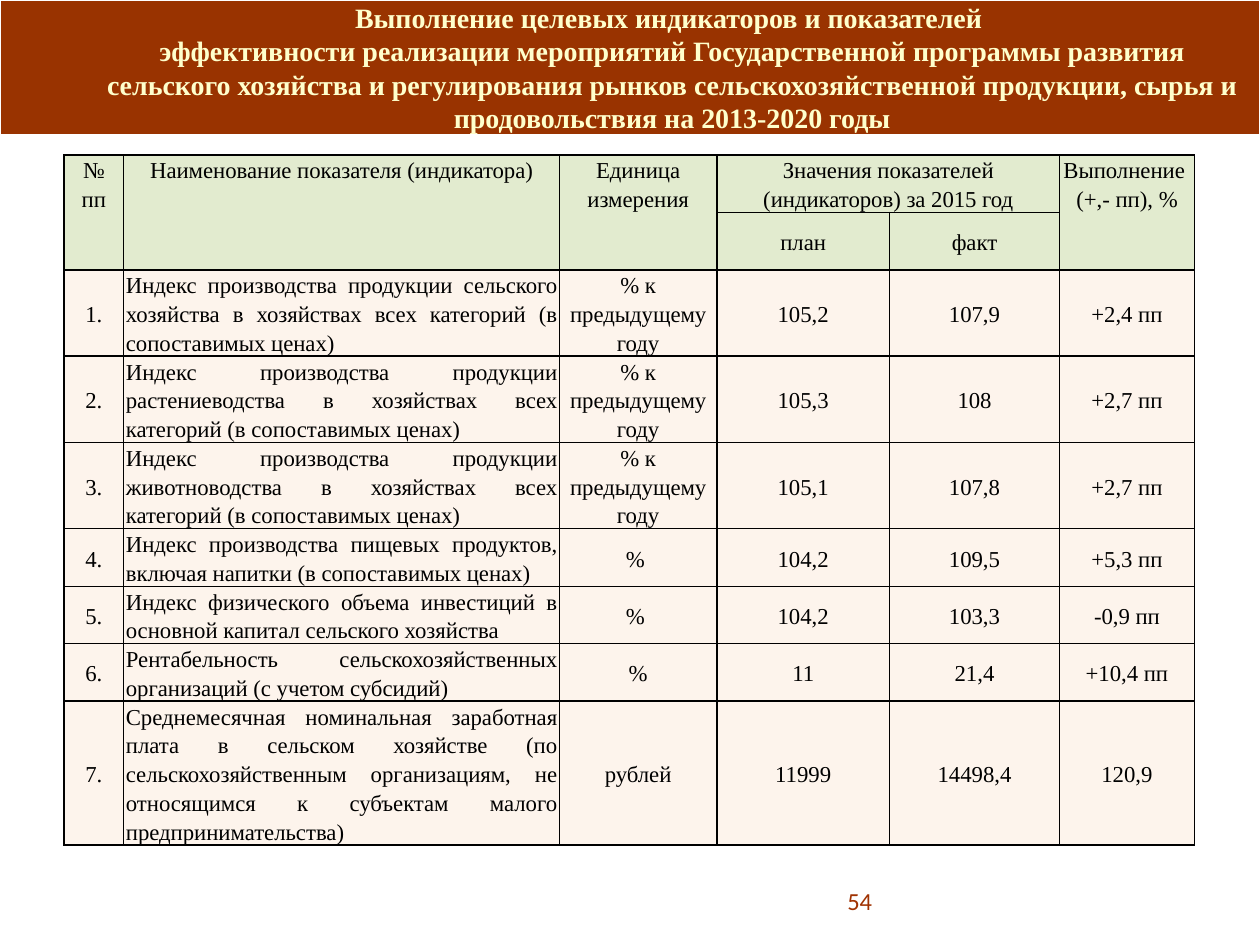
from dataclasses import dataclass

from lxml import etree
from pptx import Presentation
from pptx import util as u
from pptx.dml.color import RGBColor
from pptx.enum import shapes, text
from pptx.oxml.ns import qn


@dataclass(frozen=True)
class Theme:
    serif: str = "Times New Roman"
    sans: str = "Calibri"
    band: str = "993300"
    band_line: str = "FFFFFF"
    title: str = "FFFFCC"
    ink: str = "000000"
    number: str = "A03202"
    header_fill: tuple = ("C3D69B", 48)
    body_fill: tuple = ("FDEADA", 50)
    title_size: int = 16
    table_size: int = 13
    number_size: int = 14


ALIGN = text.PP_ALIGN
ANCHOR = text.MSO_ANCHOR

TITLE = [
    "Выполнение целевых индикаторов и показателей ",
    "эффективности реализации мероприятий Государственной программы развития "
    "сельского хозяйства и регулирования рынков сельскохозяйственной продукции, "
    "сырья и продовольствия на 2013-2020 годы",
]

# (row, column, rows spanned, columns spanned, paragraphs made of lines)
HEADERS = [
    (0, 0, 2, 1, [["№", "пп"]]),
    (0, 1, 2, 1, [["Наименование показателя (индикатора)"]]),
    (0, 2, 2, 1, [["Единица измерения"]]),
    (0, 3, 1, 2, [["Значения показателей (индикаторов) за 2015 год"]]),
    (0, 5, 2, 1, [["Выполнение "], ["(+,- пп), %"]]),
    (1, 3, 1, 1, [["план"]]),
    (1, 4, 1, 1, [["факт"]]),
]

TO_PREVIOUS_YEAR = "% к предыдущему году"
INDICATORS = [
    ("Индекс производства продукции сельского хозяйства в хозяйствах всех "
     "категорий (в сопоставимых ценах)",
     TO_PREVIOUS_YEAR, "105,2", "107,9", "+2,4 пп"),
    ("Индекс производства продукции растениеводства в хозяйствах всех "
     "категорий (в сопоставимых ценах)",
     TO_PREVIOUS_YEAR, "105,3", "108", "+2,7 пп"),
    ("Индекс производства продукции животноводства в хозяйствах всех "
     "категорий (в сопоставимых ценах)",
     TO_PREVIOUS_YEAR, "105,1", "107,8", "+2,7 пп"),
    ("Индекс производства пищевых продуктов, включая напитки "
     "(в сопоставимых ценах)", "% ", "104,2", "109,5", "+5,3 пп"),
    ("Индекс физического объема инвестиций в основной капитал сельского "
     "хозяйства", "% ", "104,2", "103,3", "-0,9 пп"),
    ("Рентабельность сельскохозяйственных организаций (с учетом субсидий)",
     "%", "11", "21,4", "+10,4 пп"),
    ("Среднемесячная номинальная заработная плата в сельском хозяйстве (по "
     "сельскохозяйственным организациям, не относящимся к субъектам малого "
     "предпринимательства)", "рублей", "11999", "14498,4", "120,9"),
]

COLUMN_WIDTHS = [0.47, 3.46, 1.25, 1.37, 1.35, 1.07]
ROW_LINES = [2, 2, 3, 3, 3, 2, 2, 2, 5]
TABLE_HEIGHT = 5.48


class SlideBuilder:
    def __init__(self, slide, theme):
        self.slide = slide
        self.theme = theme

    def add_lines(self, paragraph, lines, font, size, color, align, bold=False):
        paragraph.alignment = align
        for index, line in enumerate(lines):
            if index:
                paragraph.add_line_break()
            run = paragraph.add_run()
            run.text = line
            run.font.name = font
            run.font.size = u.Pt(size)
            run.font.bold = bold
            run.font.color.rgb = RGBColor.from_string(color)

    def band(self, left, top, width, height):
        band = self.slide.shapes.add_shape(
            shapes.MSO_SHAPE.RECTANGLE,
            *map(u.Inches, (left, top, width, height)))
        band.shadow.inherit = False
        band.fill.solid()
        band.fill.fore_color.rgb = RGBColor.from_string(self.theme.band)
        band.line.color.rgb = RGBColor.from_string(self.theme.band_line)
        band.line.width = u.Pt(0.75)
        # Index 2 is the back of the drawing order, behind the title
        self.slide.shapes._spTree.insert(2, band._element)

    def title(self, lines, left, top, width, height):
        title = self.slide.shapes.title
        title.left, title.top, title.width, title.height = map(
            u.Inches, (left, top, width, height))
        frame = title.text_frame
        frame.auto_size = text.MSO_AUTO_SIZE.NONE
        frame.vertical_anchor = ANCHOR.MIDDLE
        self.add_lines(frame.paragraphs[0], lines, self.theme.serif,
                       self.theme.title_size, self.theme.title,
                       ALIGN.CENTER, True)

    def page_number(self, number, left, top, width, height):
        box = self.slide.shapes.add_textbox(
            *map(u.Inches, (left, top, width, height)))
        frame = box.text_frame
        frame.word_wrap = True
        frame.vertical_anchor = ANCHOR.MIDDLE
        self.add_lines(frame.paragraphs[0], [number], self.theme.sans,
                       self.theme.number_size, self.theme.number, ALIGN.RIGHT)

    def table(self, left, top, widths, row_lines, height):
        """Add a plain table whose row heights follow their line counts."""
        frame = self.slide.shapes.add_table(
            len(row_lines), len(widths),
            *map(u.Inches, (left, top, sum(widths), height)))
        table = frame.table
        table.first_row = table.horz_banding = False
        for column, width in zip(table.columns, widths):
            column.width = u.Inches(width)
        for row, lines in zip(table.rows, row_lines):
            row.height = u.Inches(height * lines / sum(row_lines))
        return table

    def cell_style(self, cell, fill):
        """Set borders and a translucent fill given as (colour, opacity %)."""
        color, opacity = fill
        cell.margin_left = cell.margin_right = u.Inches(0.02)
        cell.margin_top = cell.margin_bottom = 0
        cell.fill.solid()
        cell.fill.fore_color.rgb = RGBColor.from_string(color)
        properties = cell._tc.get_or_add_tcPr()
        swatch = properties.find(".//" + qn("a:srgbClr"))
        etree.SubElement(swatch, qn("a:alpha"), val=str(opacity * 1000))
        for index, side in enumerate(("lnL", "lnR", "lnT", "lnB")):
            border = etree.Element(qn("a:" + side), w=str(u.Pt(1)))
            solid = etree.SubElement(border, qn("a:solidFill"))
            etree.SubElement(solid, qn("a:srgbClr"), val=self.theme.ink)
            properties.insert(index, border)

    def cell_text(self, cell, paragraphs, align=ALIGN.CENTER,
                  anchor=ANCHOR.MIDDLE):
        cell.vertical_anchor = anchor
        frame = cell.text_frame
        for index, lines in enumerate(paragraphs):
            paragraph = frame.add_paragraph() if index else frame.paragraphs[0]
            paragraph.line_spacing = 1.15
            self.add_lines(paragraph, lines, self.theme.serif,
                           self.theme.table_size, self.theme.ink, align)


def main():
    presentation = Presentation()
    presentation.slide_width = u.Inches(10)
    presentation.slide_height = u.Inches(7.5)
    theme = Theme()
    builder = SlideBuilder(
        presentation.slides.add_slide(presentation.slide_layouts[5]), theme)

    builder.band(0, 0, 10, 1.07)
    builder.title(TITLE, 0.67, 0, 9.33, 1.07)

    results = builder.table(0.51, 1.23, COLUMN_WIDTHS, ROW_LINES, TABLE_HEIGHT)
    for row in range(len(ROW_LINES)):
        fill = theme.header_fill if row < 2 else theme.body_fill
        for column in range(len(COLUMN_WIDTHS)):
            builder.cell_style(results.cell(row, column), fill)

    for row, column, rows, columns, paragraphs in HEADERS:
        cell = results.cell(row, column)
        if rows * columns > 1:
            cell.merge(results.cell(row + rows - 1, column + columns - 1))
        anchor = ANCHOR.MIDDLE if row else ANCHOR.TOP
        builder.cell_text(cell, paragraphs, anchor=anchor)

    for number, indicator in enumerate(INDICATORS, start=1):
        for column, value in enumerate((f"{number}.", *indicator)):
            align = ALIGN.JUSTIFY if column == 1 else ALIGN.CENTER
            builder.cell_text(results.cell(number + 1, column), [[value]], align)

    builder.page_number("54", 5.87, 6.95, 1.15, 0.4)
    presentation.save("out.pptx")


if __name__ == "__main__":
    main()
